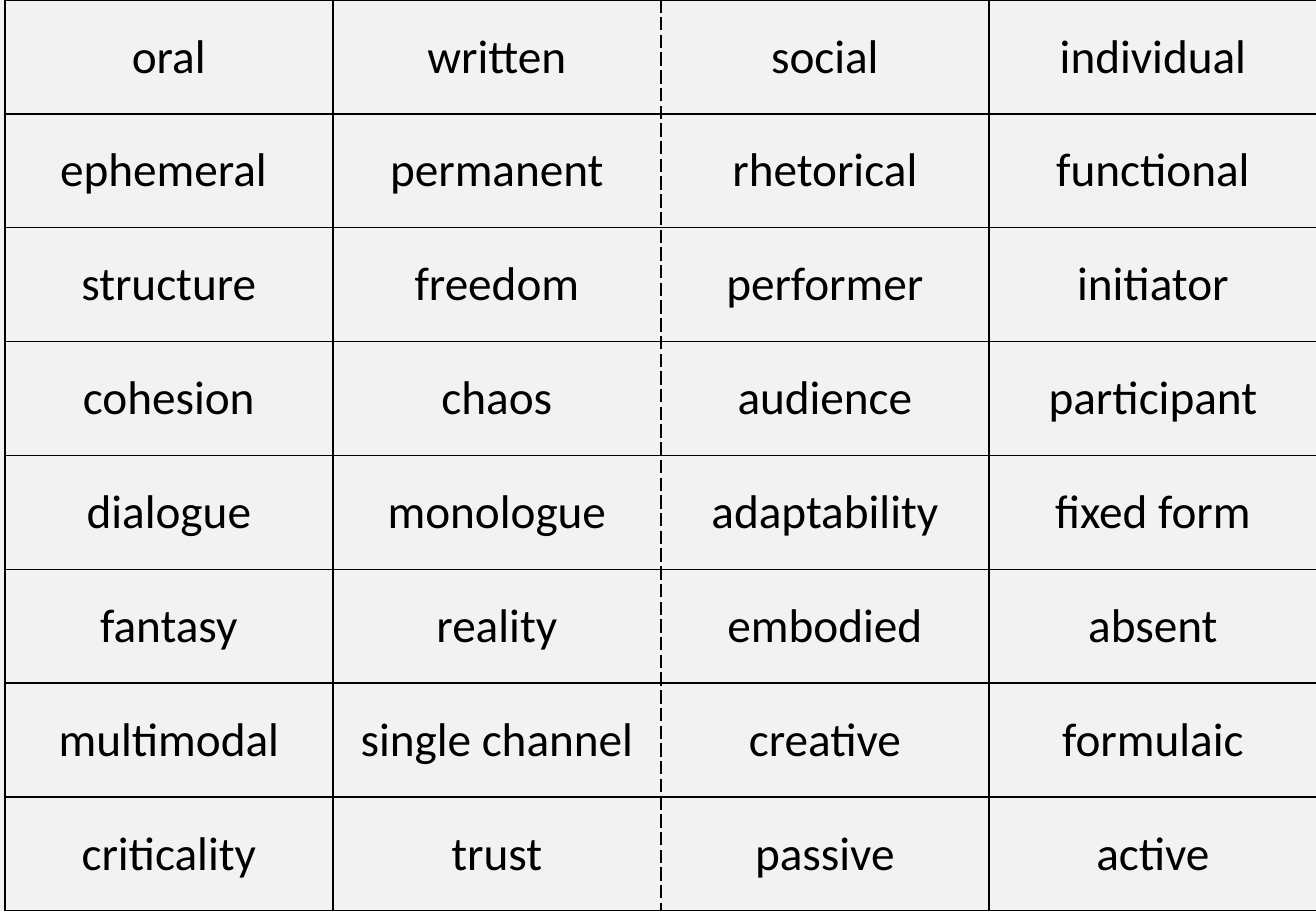
import dataclasses

import lxml.etree
import pptx
import pptx.dml.color
import pptx.enum.text
import pptx.oxml.ns
import pptx.util

Cm = pptx.util.Cm
Pt = pptx.util.Pt
qn = pptx.oxml.ns.qn


@dataclasses.dataclass(frozen=True)
class Theme:
    paper: str = "F2F2F2"
    ink: str = "000000"
    font: str = "Calibri"
    size: int = 28
    gap: int = 6
    rule: int = 1


THEME = Theme()

WORDS = [
    ["oral", "written", "social", "individual"],
    ["ephemeral ", "permanent", "rhetorical", "functional"],
    ["structure", "freedom", "performer", "initiator"],
    ["cohesion", "chaos", "audience", "participant"],
    ["dialogue", "monologue", "adaptability", "fixed form"],
    ["fantasy", "reality", "embodied", "absent"],
    ["multimodal", "single channel", "creative", "formulaic"],
    ["criticality", "trust", "passive", "active"],
]

# The dashed fold runs between the second and third columns
FOLD = {(1, "R"), (2, "L")}


def rgb(code):
    return pptx.dml.color.RGBColor.from_string(code)


def add_rule(cell, side, dash):
    props = cell._tc.get_or_add_tcPr()
    line = lxml.etree.SubElement(props, qn(f"a:ln{side}"), w=str(Pt(THEME.rule)))
    fill = lxml.etree.SubElement(line, qn("a:solidFill"))
    lxml.etree.SubElement(fill, qn("a:srgbClr"), val=THEME.ink)
    lxml.etree.SubElement(line, qn("a:prstDash"), val=dash)


def fill_card(cell, word, col):
    # Borders come before the fill in the cell's XML
    for side in "LRTB":
        add_rule(cell, side, "sysDash" if (col, side) in FOLD else "solid")
    cell.fill.background()
    cell.vertical_anchor = pptx.enum.text.MSO_ANCHOR.MIDDLE

    # Word
    cell.text = word
    para = cell.text_frame.paragraphs[0]
    para.alignment = pptx.enum.text.PP_ALIGN.CENTER
    para.space_before = Pt(THEME.gap)
    para.font.name = THEME.font
    para.font.size = Pt(THEME.size)
    para.font.color.rgb = rgb(THEME.ink)


def add_cards(slide, left, top, width, height):
    rows, cols = len(WORDS), len(WORDS[0])
    table = slide.shapes.add_table(rows, cols, left, top, width, height).table
    table.first_row = False
    table.horz_banding = False
    for row, words in enumerate(WORDS):
        for col, word in enumerate(words):
            fill_card(table.cell(row, col), word, col)


def main():
    deck = pptx.Presentation()
    deck.slide_width = Cm(27.51)
    deck.slide_height = Cm(19.05)

    # Blank slide on light grey
    slide = deck.slides.add_slide(deck.slide_layouts[6])
    back = slide.background.fill
    back.solid()
    back.fore_color.rgb = rgb(THEME.paper)

    # Word cards
    add_cards(slide, Cm(0.1), Cm(0), Cm(27.43), deck.slide_height)
    deck.save("out.pptx")


if __name__ == "__main__":
    main()
